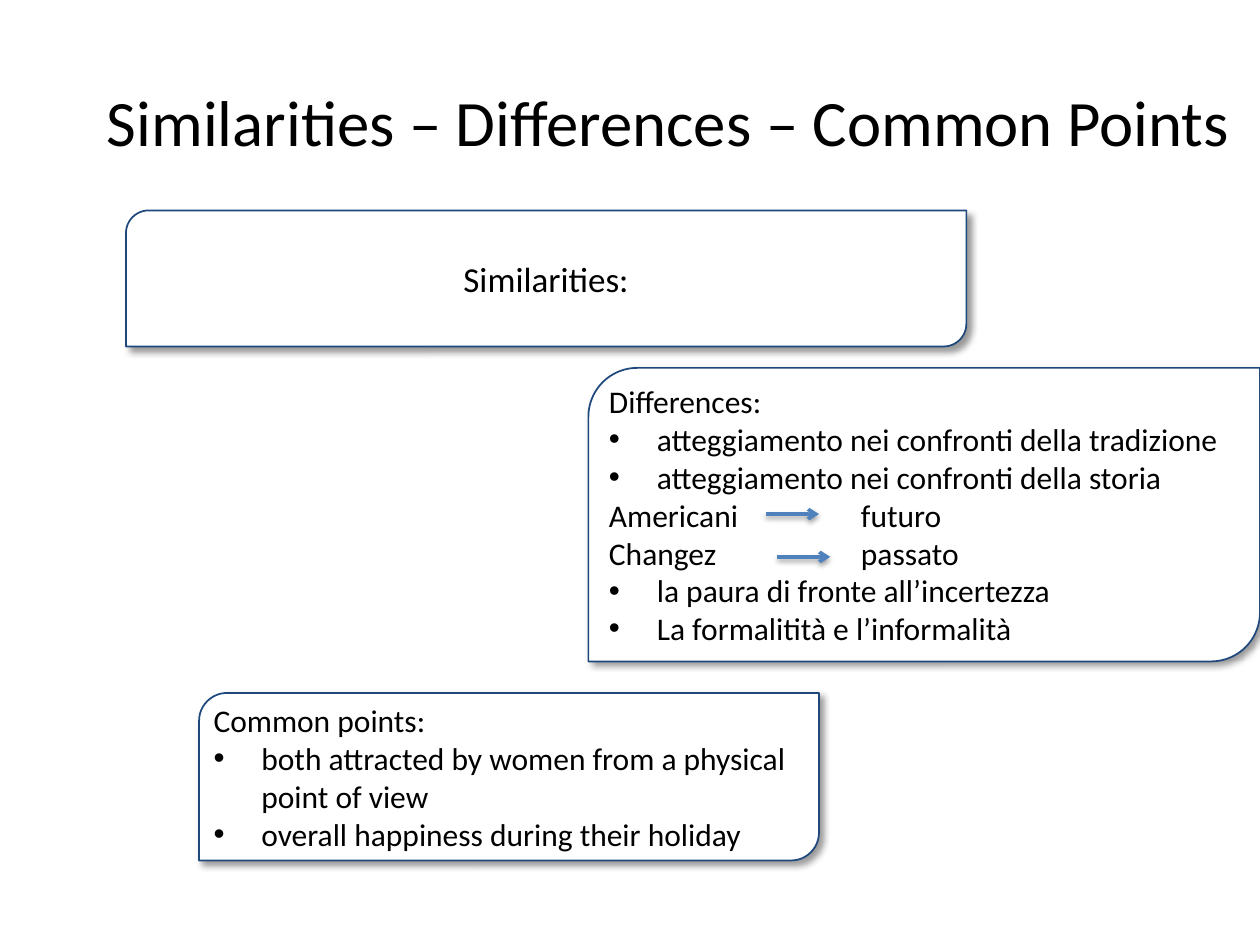
import pptx
import pptx.dml.color
import pptx.enum.shapes
import pptx.enum.text
import pptx.oxml
import pptx.oxml.ns
import pptx.util
from pptx.util import Inches

BLACK = pptx.dml.color.RGBColor(0x00, 0x00, 0x00)
WHITE = pptx.dml.color.RGBColor(0xFF, 0xFF, 0xFF)
NAVY = pptx.dml.color.RGBColor(0x1F, 0x49, 0x7D)
BLUE = pptx.dml.color.RGBColor(0x4F, 0x81, 0xBD)
NAMESPACE = pptx.oxml.ns.nsdecls("a")
BULLET = "• "


def write_text(shape, lines, size, inset=0.05, align=pptx.enum.text.PP_ALIGN.LEFT, tab=None):
    frame = shape.text_frame
    frame.word_wrap = True
    frame.vertical_anchor = pptx.enum.text.MSO_ANCHOR.MIDDLE
    frame.margin_left = frame.margin_right = Inches(inset)
    frame.margin_top = frame.margin_bottom = Inches(0.05)
    for index, line in enumerate(lines):
        paragraph = frame.paragraphs[0] if index == 0 else frame.add_paragraph()
        paragraph.alignment = align
        properties = paragraph._p.get_or_add_pPr()
        if line.startswith(BULLET):
            properties.set("marL", str(Inches(0.38)))
            properties.set("indent", str(-Inches(0.38)))
            properties.append(pptx.oxml.parse_xml(f'<a:buFont {NAMESPACE} typeface="Arial"/>'))
            properties.append(pptx.oxml.parse_xml(f'<a:buChar {NAMESPACE} char="•"/>'))
        elif "\t" in line:
            properties.append(pptx.oxml.parse_xml(
                f'<a:tabLst {NAMESPACE}><a:tab pos="{Inches(tab)}" algn="l"/></a:tabLst>'))
        run = paragraph.add_run()
        run.text = line.removeprefix(BULLET)
        run.font.name = "Calibri"
        run.font.size = pptx.util.Pt(size)
        run.font.color.rgb = BLACK


def add_shadow(shape, blur, distance, angle, opacity):
    shape._element.spPr.append(pptx.oxml.parse_xml(
        f'<a:effectLst {NAMESPACE}><a:outerShdw blurRad="{pptx.util.Pt(blur)}" '
        f'dist="{pptx.util.Pt(distance)}" dir="{angle * 60000}" algn="tl" rotWithShape="0">'
        f'<a:srgbClr val="{BLACK}"><a:alpha val="{opacity * 1000}"/></a:srgbClr>'
        f'</a:outerShdw></a:effectLst>'))


presentation = pptx.Presentation()
presentation.slide_width = Inches(10)
presentation.slide_height = Inches(7.5)
slide = presentation.slides.add_slide(presentation.slide_layouts[6])

title = slide.shapes.add_textbox(Inches(0.75), Inches(0.33), Inches(9.25), Inches(1.25))
write_text(title, ["Similarities – Differences – Common Points"], 37, inset=0.1)

cards = [
    ((1, 1.67, 6.67, 1.08), 20, pptx.enum.text.PP_ALIGN.CENTER, ["Similarities:"]),
    ((1.58, 5.5, 4.92, 1.33), 18, pptx.enum.text.PP_ALIGN.LEFT, [
        "Common points:",
        "• both attracted by women from a physical point of view",
        "• overall happiness during their holiday",
    ]),
    ((4.67, 2.92, 5.33, 2.33), 18, pptx.enum.text.PP_ALIGN.LEFT, [
        "Differences:",
        "• atteggiamento nei confronti della tradizione",
        "• atteggiamento nei confronti della storia",
        "Americani\tfuturo",
        "Changez\tpassato",
        "• la paura di fronte all’incertezza",
        "• La formalitità e l’informalità",
    ]),
]
for box, size, align, lines in cards:
    card = slide.shapes.add_shape(
        pptx.enum.shapes.MSO_SHAPE.ROUND_2_DIAG_RECTANGLE, *map(Inches, box))
    card.fill.solid()
    card.fill.fore_color.rgb = WHITE
    card.line.color.rgb = NAVY
    card.line.width = pptx.util.Pt(1)
    add_shadow(card, 4, 3, 45, 40)
    write_text(card, lines, size, align=align, tab=2)

for left, top in [(6.08, 4.08), (6.17, 4.42)]:
    arrow = slide.shapes.add_connector(
        pptx.enum.shapes.MSO_CONNECTOR.STRAIGHT,
        Inches(left), Inches(top), Inches(left + 0.42), Inches(top))
    arrow.line.color.rgb = BLUE
    arrow.line.width = pptx.util.Pt(2)
    arrow.line._get_or_add_ln().append(
        pptx.oxml.parse_xml(f'<a:tailEnd {NAMESPACE} type="arrow"/>'))
    add_shadow(arrow, 3.1, 1.6, 90, 38)

presentation.save("out.pptx")
